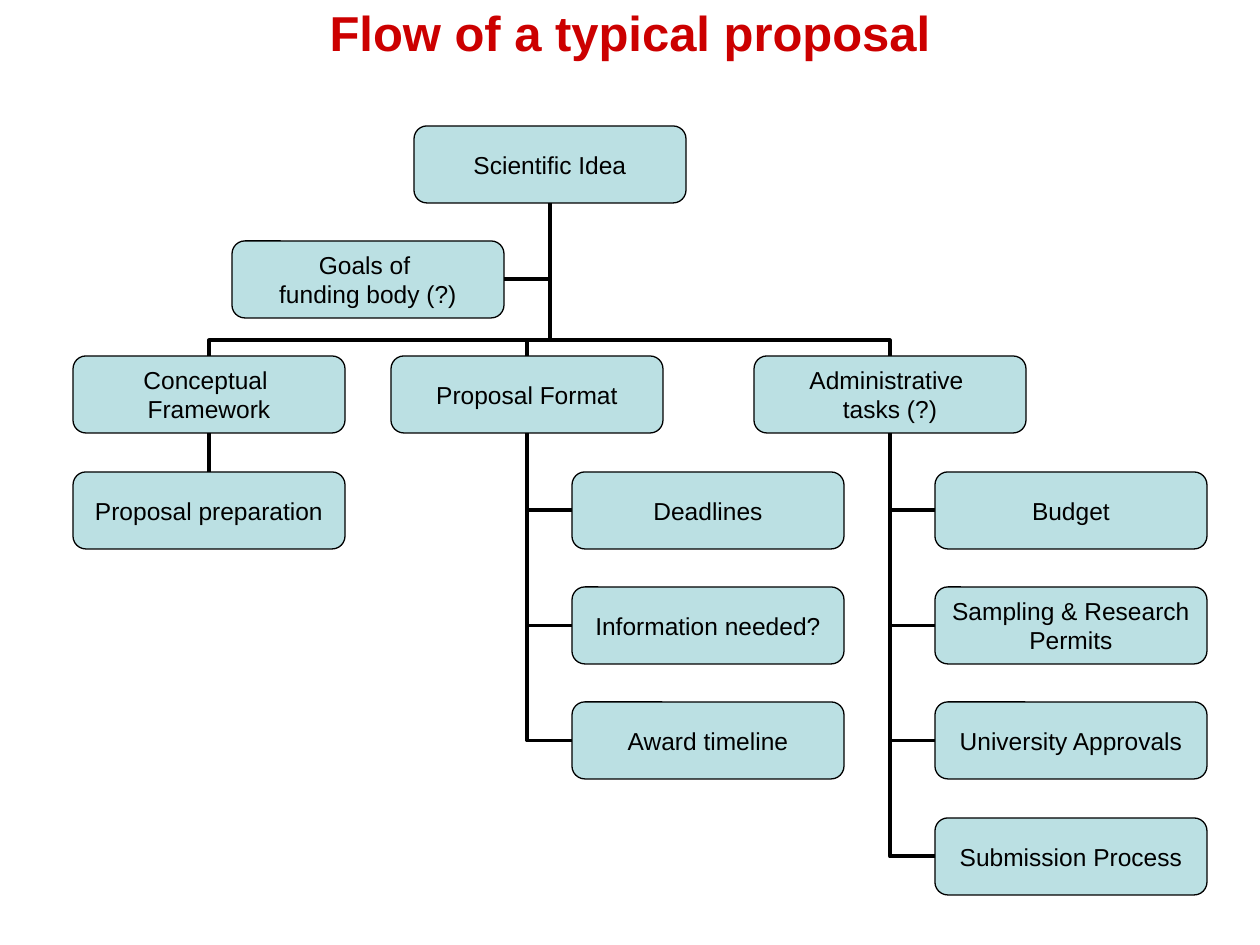
from dataclasses import dataclass
from typing import Dict

import lxml.etree
import pptx
import pptx.dml.color
import pptx.enum.shapes
import pptx.enum.text
import pptx.oxml.ns
import pptx.util

EMU_PER_PX = 914400 / 126
BOX_WIDTH, BOX_HEIGHT = 272, 77
FIRST_ROW_TOP, ROW_PITCH = 126, 115.25
TOP, LEFT, BOTTOM, RIGHT = range(4)
BUS_OFFSET = "val 10200"


@dataclass(frozen=True)
class Theme:
    font: str = "Arial"
    title_color: str = "CC0000"
    ink: str = "000000"
    box_fill: str = "BBE0E3"
    title_size: float = 28
    box_size: float = 14
    outline: float = 0.75
    link: float = 2.25


@dataclass(frozen=True)
class Step:
    key: str
    text: str
    left: int
    row: int


@dataclass(frozen=True)
class Link:
    child: str
    parent: str
    side: int


THEME = Theme()

STEPS = [
    Step("idea", "Scientific Idea", 414, 0),
    Step("goals", "Goals of \vfunding body (?)", 232, 1),
    Step("framework", "Conceptual \nFramework", 73, 2),
    Step("format", "Proposal Format", 391, 2),
    Step("tasks", "Administrative \ntasks (?)", 754, 2),
    Step("preparation", "Proposal preparation", 73, 3),
    Step("deadlines", "Deadlines", 572, 3),
    Step("information", "Information needed?", 572, 4),
    Step("award", "Award timeline", 572, 5),
    Step("budget", "Budget", 935, 3),
    Step("permits", "Sampling & Research\vPermits", 935, 4),
    Step("approvals", "University Approvals", 935, 5),
    Step("submission", "Submission Process", 935, 6),
]

LINKS = [
    Link("goals", "idea", RIGHT),
    *(Link(key, "idea", TOP) for key in ("framework", "format", "tasks")),
    Link("preparation", "framework", TOP),
    *(Link(key, "format", LEFT) for key in ("deadlines", "information", "award")),
    *(Link(key, "tasks", LEFT)
      for key in ("budget", "permits", "approvals", "submission")),
]


def px(length: float) -> pptx.util.Emu:
    return pptx.util.Emu(round(length * EMU_PER_PX))


def rgb(value: str) -> pptx.dml.color.RGBColor:
    return pptx.dml.color.RGBColor.from_string(value)


def format_text(frame, size: float, color: str, bold: bool) -> None:
    frame.vertical_anchor = pptx.enum.text.MSO_ANCHOR.MIDDLE
    for paragraph in frame.paragraphs:
        paragraph.alignment = pptx.enum.text.PP_ALIGN.CENTER
        for run in paragraph.runs:
            run.font.name = THEME.font
            run.font.size = pptx.util.Pt(size)
            run.font.bold = bold
            run.font.color.rgb = rgb(color)


def draw_title(slide, text: str) -> None:
    title = slide.shapes.title
    title.left, title.top, title.width, title.height = map(px, (63, 0, 1134, 63))
    title.text_frame.text = text
    format_text(title.text_frame, THEME.title_size, THEME.title_color, True)


def draw_step(slide, step: Step):
    box = slide.shapes.add_shape(
        pptx.enum.shapes.MSO_SHAPE.ROUNDED_RECTANGLE,
        px(step.left), px(round(FIRST_ROW_TOP + step.row * ROW_PITCH)),
        px(BOX_WIDTH), px(BOX_HEIGHT))
    box.shadow.inherit = False
    box.fill.solid()
    box.fill.fore_color.rgb = rgb(THEME.box_fill)
    box.line.color.rgb = rgb(THEME.ink)
    box.line.width = pptx.util.Pt(THEME.outline)
    frame = box.text_frame
    frame.margin_left = frame.margin_top = 0
    frame.margin_right = frame.margin_bottom = 0
    frame.word_wrap = False
    frame.text = step.text
    format_text(frame, THEME.box_size, THEME.ink, False)
    return box


def route_vertically(connector) -> None:
    runs_left = connector.begin_x > connector.end_x
    left, top = connector.left, connector.top
    width, height = connector.width, connector.height
    connector.left = left + (width - height) // 2
    connector.top = top + (height - width) // 2
    connector.width, connector.height = height, width
    xfrm = connector._element.spPr.find(pptx.oxml.ns.qn("a:xfrm"))
    for flip in ("flipH", "flipV"):
        xfrm.attrib.pop(flip, None)
    xfrm.set("rot", "5400000" if runs_left else "16200000")
    if runs_left:
        xfrm.set("flipH", "1")
    geometry = connector._element.spPr.find(pptx.oxml.ns.qn("a:prstGeom"))
    guides = geometry.find(pptx.oxml.ns.qn("a:avLst"))
    lxml.etree.SubElement(guides, pptx.oxml.ns.qn("a:gd"),
                          name="adj1", fmla=BUS_OFFSET)


def draw_link(slide, boxes: Dict, link: Link) -> None:
    child, parent = boxes[link.child], boxes[link.parent]
    kinds = pptx.enum.shapes.MSO_CONNECTOR
    straight = link.side == TOP and child.left == parent.left
    connector = slide.shapes.add_connector(
        kinds.STRAIGHT if straight else kinds.ELBOW, 0, 0, 0, 0)
    connector.begin_connect(child, link.side)
    connector.end_connect(parent, BOTTOM)
    properties = connector._element.spPr
    if link.side != TOP:
        properties.find(pptx.oxml.ns.qn("a:prstGeom")).set("prst", "bentConnector2")
    elif not straight:
        route_vertically(connector)
    connector.line.color.rgb = rgb(THEME.ink)
    connector.line.width = pptx.util.Pt(THEME.link)
    lxml.etree.SubElement(properties, pptx.oxml.ns.qn("a:effectLst"))


def main() -> None:
    deck = pptx.Presentation()
    deck.slide_width, deck.slide_height = px(1260), px(945)
    slide = deck.slides.add_slide(deck.slide_layouts[5])
    draw_title(slide, "Flow of a typical proposal")
    boxes = {step.key: draw_step(slide, step) for step in STEPS}
    for link in LINKS:
        draw_link(slide, boxes, link)
    deck.save("out.pptx")


if __name__ == "__main__":
    main()
